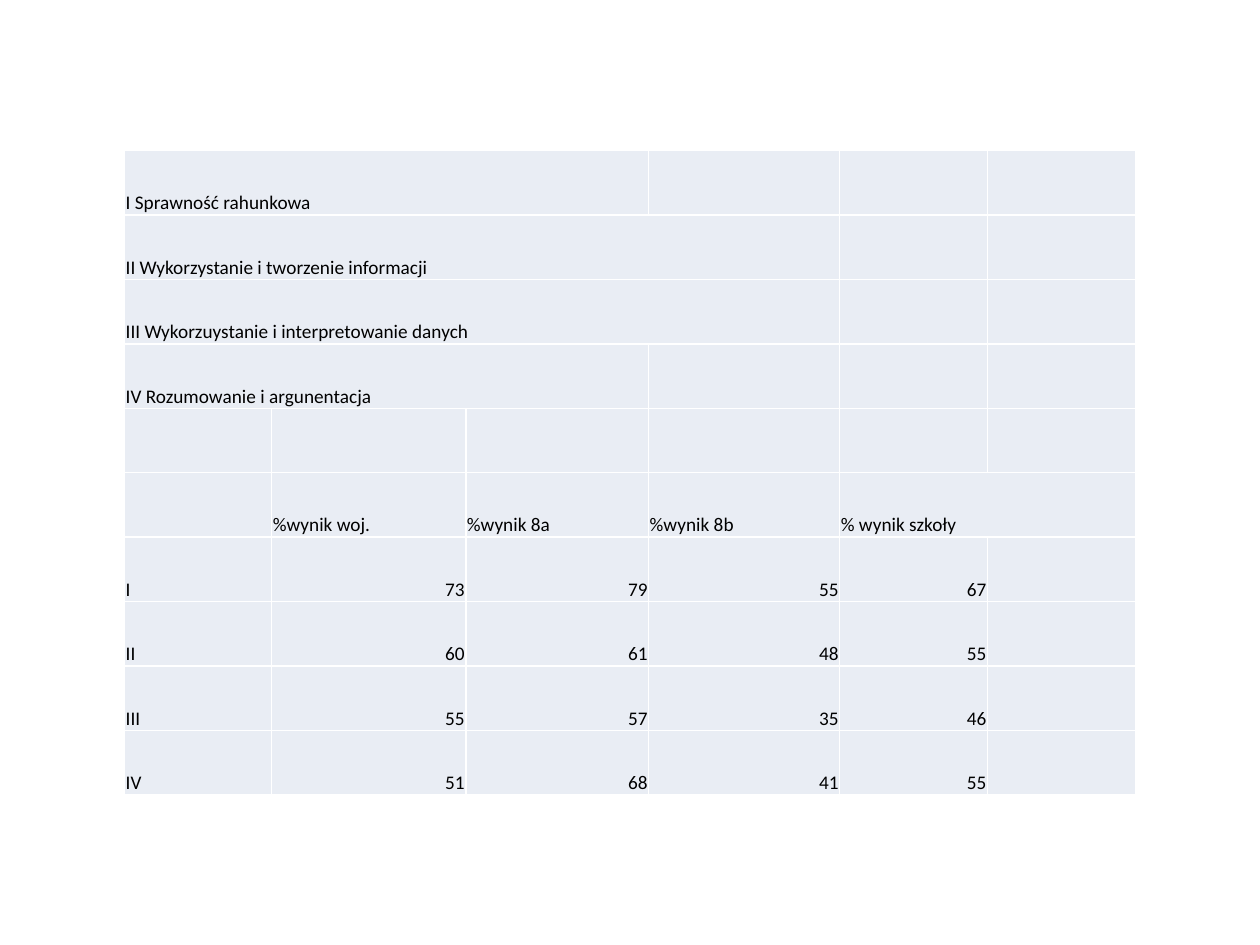
from pptx import Presentation
from pptx.dml.color import RGBColor
from pptx.enum.text import MSO_ANCHOR, PP_ALIGN
from pptx.oxml.ns import qn
from pptx.util import Pt
from lxml import etree

BOTTOM = MSO_ANCHOR.BOTTOM
LEFT, RIGHT = PP_ALIGN.LEFT, PP_ALIGN.RIGHT
BLACK = RGBColor(0x00, 0x00, 0x00)
WHITE = RGBColor(0xFF, 0xFF, 0xFF)
PALE = RGBColor(0xE9, 0xED, 0xF4)

WIDTHS = [84.1, 110.9, 104.5, 109.2, 84.5, 84.5]
HEIGHT = 36.83
SKILLS = [
    ("I Sprawność rahunkowa", 3),
    ("II Wykorzystanie i tworzenie informacji", 4),
    ("III Wykorzuystanie i interpretowanie danych", 4),
    ("IV Rozumowanie i argunentacja", 3),
]
HEADS = ["", "%wynik woj.", "%wynik 8a", "%wynik 8b", "% wynik szkoły"]
SCORES = [
    ("I", 73, 79, 55, 67),
    ("II", 60, 61, 48, 55),
    ("III", 55, 57, 35, 46),
    ("IV", 51, 68, 41, 55),
]


class Deck:
    """Hold the table style and the current slide."""

    def __init__(self):
        self.prs = Presentation()
        self.prs.slide_width, self.prs.slide_height = Pt(720), Pt(540)
        self.slide = self.prs.slides.add_slide(self.prs.slide_layouts[6])
        self.font, self.size = "Calibri", Pt(11)

    def border(self, cell):
        props = cell._tc.get_or_add_tcPr()
        for side in ("lnL", "lnR", "lnT", "lnB"):
            line = etree.SubElement(props, qn(f"a:{side}"), w=str(Pt(1)))
            fill = etree.SubElement(line, qn("a:solidFill"))
            etree.SubElement(fill, qn("a:srgbClr"), val=str(WHITE))

    def table(self, left, top, widths, rows, height):
        frame = self.slide.shapes.add_table(
            rows, len(widths), Pt(left), Pt(top),
            Pt(sum(widths)), Pt(rows * height))
        grid = frame.table
        grid.first_row = grid.horz_banding = False
        for col, width in zip(grid.columns, widths):
            col.width = Pt(width)
        for row in grid.rows:
            row.height = Pt(height)
            for cell in row.cells:
                self.border(cell)
                cell.fill.solid()
                cell.fill.fore_color.rgb = PALE
        return grid

    def label(self, cell, text, align=LEFT):
        cell.vertical_anchor = BOTTOM
        cell.margin_left = cell.margin_right = cell.margin_top = Pt(0.6)
        cell.margin_bottom = Pt(0)
        par = cell.text_frame.paragraphs[0]
        par.alignment = align
        run = par.add_run()
        run.text = text
        run.font.name, run.font.size = self.font, self.size
        run.font.color.rgb = BLACK

    def join(self, grid, row, first, last):
        grid.cell(row, first).merge(grid.cell(row, last))


def main():
    deck = Deck()
    count = len(SKILLS) + 2 + len(SCORES)
    grid = deck.table(71.2, 86, WIDTHS, count, HEIGHT)
    for row, (name, span) in enumerate(SKILLS):
        deck.join(grid, row, 0, span - 1)
        deck.label(grid.cell(row, 0), name)

    head = len(SKILLS) + 1
    deck.join(grid, head, 4, 5)
    for col, text in enumerate(HEADS):
        if text:
            deck.label(grid.cell(head, col), text)

    for row, marks in enumerate(SCORES, head + 1):
        for col, mark in enumerate(marks):
            deck.label(grid.cell(row, col), str(mark), RIGHT if col else LEFT)
    deck.prs.save("out.pptx")


if __name__ == "__main__":
    main()
